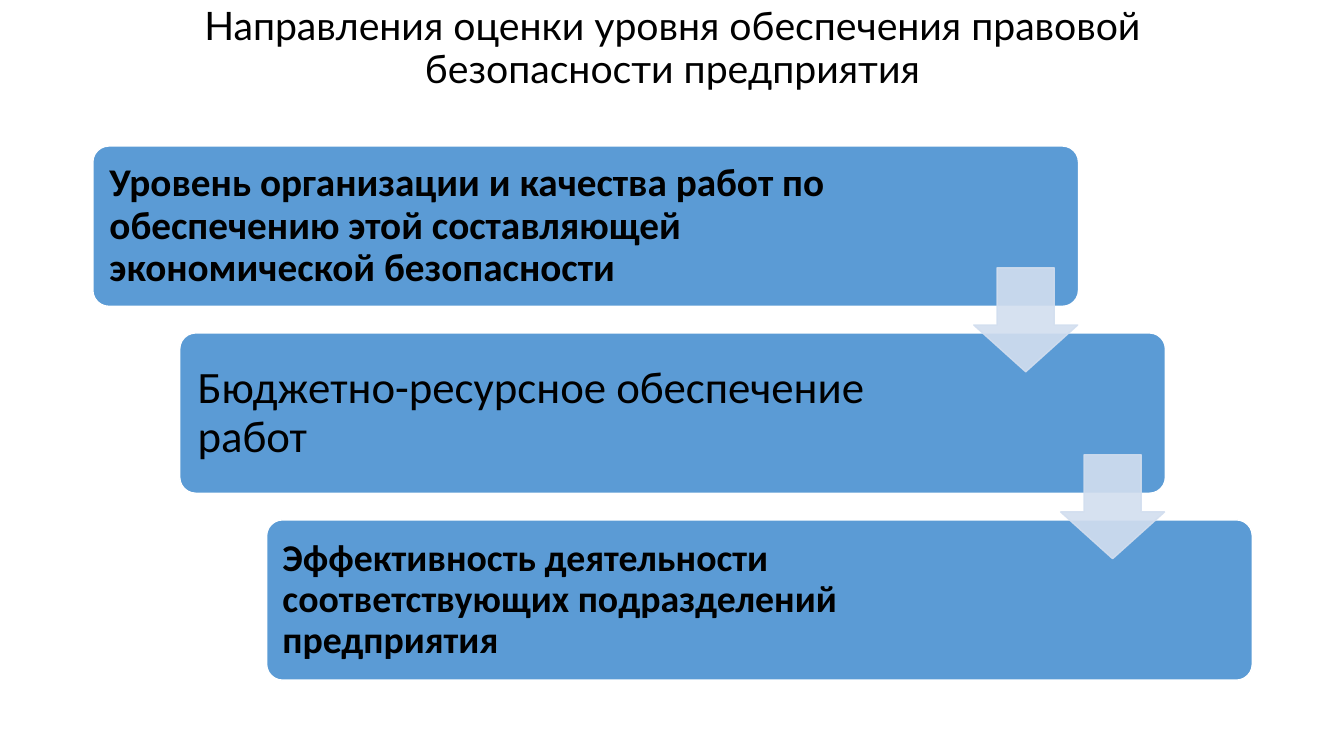
from lxml import etree
from pptx import Presentation
from pptx.dml.color import RGBColor
from pptx.enum.shapes import MSO_SHAPE
from pptx.enum.text import MSO_ANCHOR, PP_ALIGN
from pptx.oxml.ns import qn
from pptx.util import Cm, Pt

ROUND = MSO_SHAPE.ROUNDED_RECTANGLE
DOWN = MSO_SHAPE.DOWN_ARROW
MIDDLE = MSO_ANCHOR.MIDDLE
LEFT = PP_ALIGN.LEFT
CENTER = PP_ALIGN.CENTER

TITLE = "Направления оценки уровня обеспечения правовой безопасности предприятия"
STEPS = [
    ("Уровень организации и качества работ по обеспечению этой составляющей экономической безопасности",
     28, True, 20.47, 0.3),
    ("Бюджетно-ресурсное обеспечение работ", 32, False, 19.76, 0.33),
    ("Эффективность деятельности соответствующих подразделений предприятия",
     27, True, 19.76, 0.28),
]
STEP_X, STEP_Y = 2.19, 4.71


def color(text):
    return RGBColor.from_string(text)


class Deck:
    ink = "000000"
    blue = "5B9BD5"
    pale = "D2DEEF"
    white = "FFFFFF"

    def __init__(self):
        self.file = Presentation()
        self.file.slide_width = Cm(33.87)
        self.file.slide_height = Cm(19.05)
        self.slide = self.file.slides.add_slide(self.file.slide_layouts[6])

    def text(self, words, box, font, size, bold=False, align=LEFT, pads=(0.25, 0.13, 0.25, 0.13)):
        frame = self.slide.shapes.add_textbox(*map(Cm, box)).text_frame
        frame.word_wrap = True
        frame.vertical_anchor = MIDDLE
        frame.margin_left, frame.margin_top, frame.margin_right, frame.margin_bottom = map(Cm, pads)
        para = frame.paragraphs[0]
        para.alignment = align
        para.line_spacing = 0.9
        run = para.add_run()
        run.text = words
        run.font.name = font
        run.font.size = Pt(size)
        run.font.bold = bold
        run.font.color.rgb = color(self.ink)

    def shape(self, kind, box, adjust, fill, line, alpha=None):
        shape = self.slide.shapes.add_shape(kind, *map(Cm, box))
        shape.shadow.inherit = False
        for index, value in enumerate(adjust):
            shape.adjustments[index] = value
        shape.fill.solid()
        shape.fill.fore_color.rgb = color(fill)
        shape.line.color.rgb = color(line)
        shape.line.width = Pt(1)
        if alpha:
            for tint in shape.element.spPr.iter(qn("a:srgbClr")):
                etree.SubElement(tint, qn("a:alpha")).set("val", str(alpha * 1000))

    def panel(self, x, y):
        self.shape(ROUND, (x, y, 24.84, 4.04), [0.1], self.blue, self.white)

    def arrow(self, x, y):
        self.shape(DOWN, (x, y, 2.62, 2.62), [0.55, 0.45], self.pale, self.pale, 90)


def main():
    deck = Deck()
    deck.text(TITLE, (2.34, 0.89, 29.21, 1.93), "Lato", 28, align=CENTER,
              pads=(0.25, 0.13, 0.25, 1.35))
    for i, (words, size, bold, width, pad) in enumerate(STEPS):
        x, y = 2.34 + i * STEP_X, 3.68 + i * STEP_Y
        deck.panel(x, y)
        deck.text(words, (x + 0.12, y + 0.12, width, 3.81), "Calibri", size, bold, pads=[pad] * 4)
    for i in range(len(STEPS) - 1):
        deck.arrow(24.54 + i * STEP_X, 6.75 + i * STEP_Y)
    deck.file.save("out.pptx")


if __name__ == "__main__":
    main()
